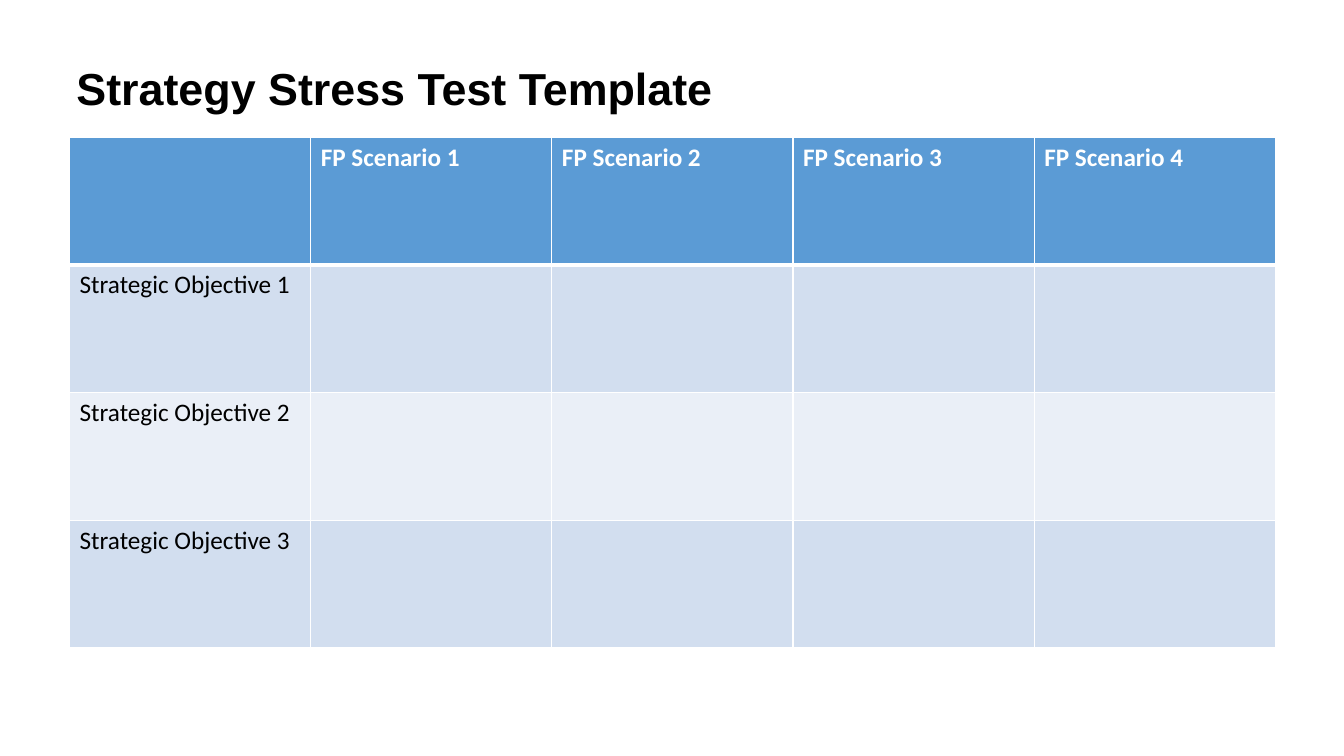
from dataclasses import dataclass

from lxml.etree import SubElement
from pptx import Presentation
from pptx.dml.color import RGBColor
from pptx.oxml.ns import qn
from pptx.util import Inches, Pt


@dataclass(frozen=True)
class Theme:
    header: str = "5B9BD5"
    bands: tuple = ("D2DEEF", "EAEFF7")
    light: str = "FFFFFF"
    dark: str = "000000"
    title_font: str = "Arial"
    table_font: str = "Calibri"
    title_size: int = 32
    table_size: int = 18
    thin: int = 1
    thick: int = 3


THEME = Theme()
SCENARIOS = [f"FP Scenario {number}" for number in range(1, 5)]
OBJECTIVES = [f"Strategic Objective {number}" for number in range(1, 4)]


def add_text(frame, text, font_name, size, color, bold):
    run = frame.paragraphs[0].add_run()
    run.text = text
    run.font.name = font_name
    run.font.size = Pt(size)
    run.font.bold = bold
    run.font.color.rgb = RGBColor.from_string(color)


def add_title(slide, text):
    title = slide.shapes.add_textbox(Inches(0.66), Inches(0.55), Inches(9.48), Inches(0.64))
    title.text_frame.word_wrap = True
    add_text(title.text_frame, text, THEME.title_font, THEME.title_size, THEME.dark, True)


def set_borders(cell, top, bottom):
    properties = cell._tc.get_or_add_tcPr()
    widths = {"a:lnL": THEME.thin, "a:lnR": THEME.thin, "a:lnT": top, "a:lnB": bottom}
    for side, width in widths.items():
        border = SubElement(properties, qn(side), w=str(Pt(width)))
        fill = SubElement(border, qn("a:solidFill"))
        SubElement(fill, qn("a:srgbClr"), val=THEME.light)


def style_cell(cell, row):
    set_borders(
        cell,
        THEME.thick if row == 1 else THEME.thin,
        THEME.thick if row == 0 else THEME.thin,
    )
    color = THEME.bands[(row - 1) % 2] if row else THEME.header
    cell.fill.solid()
    cell.fill.fore_color.rgb = RGBColor.from_string(color)


def add_stress_test(slide, scenarios, objectives):
    rows = [["", *scenarios]] + [[name] + [""] * len(scenarios) for name in objectives]
    grid = slide.shapes.add_table(
        len(rows), len(rows[0]), Inches(0.69), Inches(1.36), Inches(11.96), Inches(5.07)
    ).table
    for row, texts in enumerate(rows):
        for column, text in enumerate(texts):
            cell = grid.cell(row, column)
            style_cell(cell, row)
            if text:
                color = THEME.dark if row else THEME.light
                add_text(cell.text_frame, text, THEME.table_font, THEME.table_size, color, row == 0)


def main():
    deck = Presentation()
    deck.slide_width = Inches(13.33)
    deck.slide_height = Inches(7.5)
    slide = deck.slides.add_slide(deck.slide_layouts[6])
    add_stress_test(slide, SCENARIOS, OBJECTIVES)
    add_title(slide, "Strategy Stress Test Template")
    deck.save("out.pptx")


if __name__ == "__main__":
    main()
